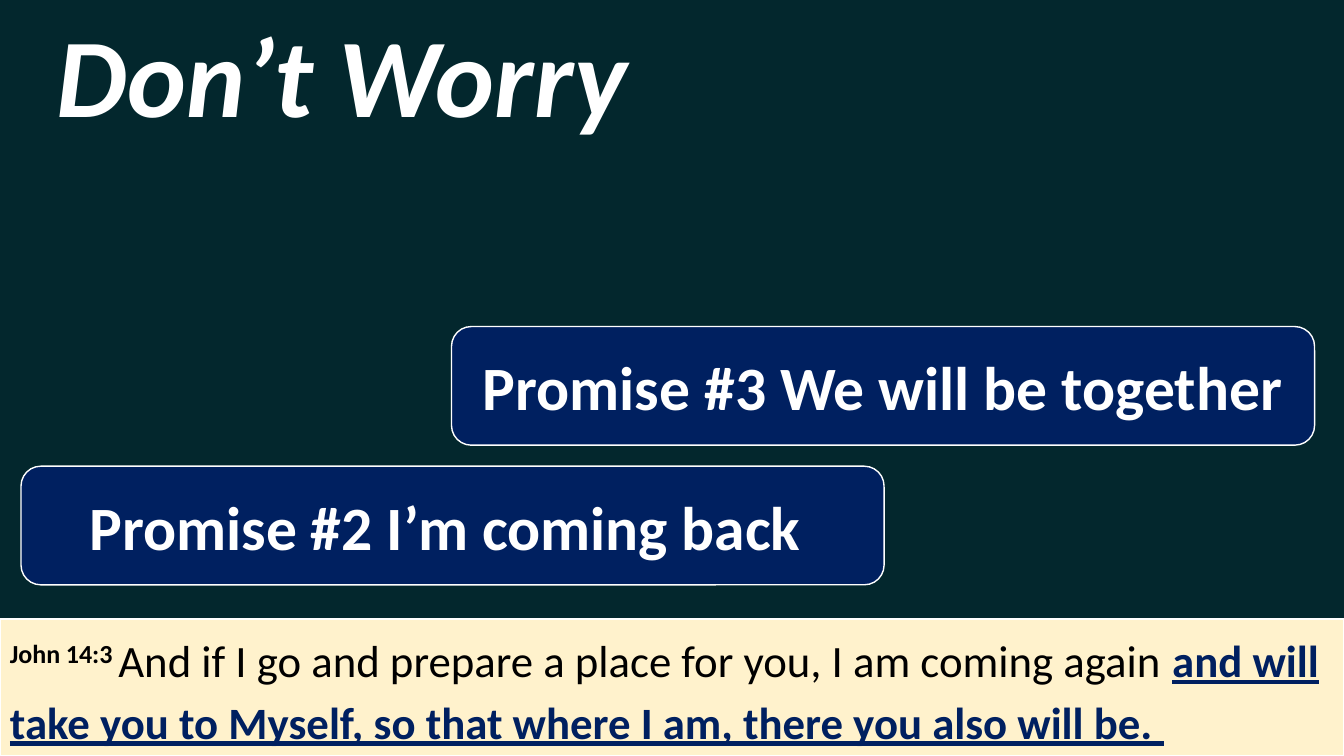
"""Build the "Don't Worry" slide with two promises and a verse."""
from pptx import Presentation
from pptx.dml.color import RGBColor
from pptx.enum.shapes import MSO_SHAPE as Kind
from pptx.enum.text import MSO_ANCHOR as Anchor, PP_ALIGN as Align
from pptx.util import Pt

PX = 9525
WHITE, NAVY, CREAM = "FFFFFF", "002060", "FFF2CC"


def tint(code):
    return RGBColor.from_string(code)


def style(run, size, color, bold=True):
    font = run.font
    font.name, font.size, font.bold = "Calibri", Pt(size), bold
    font.color.rgb = tint(color)
    return font


deck = Presentation()
deck.slide_width, deck.slide_height = 1280 * PX, 720 * PX
slide = deck.slides.add_slide(deck.slide_layouts[6])
back = slide.background.fill
back.solid()
back.fore_color.rgb = tint("03272D")

boxes = [
    (Kind.RECTANGLE, 0, 590, 1280, 130, CREAM, 1.5, "", 32),
    (Kind.ROUNDED_RECTANGLE, 18, 13, 640, 113, None, 0, "Don’t Worry ", 80),
    (Kind.ROUNDED_RECTANGLE, 20, 444, 822, 113, NAVY, 1, "Promise #2 I’m coming back ", 44),
    (Kind.ROUNDED_RECTANGLE, 430, 311, 822, 113, NAVY, 1, "Promise #3 We will be together", 44),
]
shapes = []
for kind, left, top, wide, high, color, line, text, size in boxes:
    shape = slide.shapes.add_shape(kind, left * PX, top * PX, wide * PX, high * PX)
    shape.shadow.inherit = False
    if color:
        shape.fill.solid()
        shape.fill.fore_color.rgb = tint(color)
        shape.line.color.rgb = tint(WHITE)
        shape.line.width = Pt(line)
    else:
        shape.fill.background()
        shape.line.fill.background()
    frame = shape.text_frame
    frame.word_wrap = True
    shapes.append(shape)
    if text:
        frame.vertical_anchor = Anchor.MIDDLE
        para = frame.paragraphs[0]
        para.text = text
        para.alignment = Align.CENTER
        style(para.runs[0], size, WHITE)

verse, title = shapes[:2]
title.text_frame.paragraphs[0].runs[0].font.italic = True

verse.text_frame.vertical_anchor = Anchor.TOP
para = verse.text_frame.paragraphs[0]
para.alignment = Align.LEFT
para.line_spacing = 1.15
para.space_after = Pt(8)
parts = [
    ("John 14:3 ", "000000", True),
    ("And if I go and prepare a place for you, I am coming again ", "000000", False),
    ("and will take you to Myself, so that where I am, there you also will be. ", NAVY, True),
]
for text, color, bold in parts:
    run = para.add_run()
    run.text = text
    style(run, 32, color, bold)
ref, _, vow = para.runs
ref._r.get_or_add_rPr().set("baseline", "30000")
vow.font.underline = True

deck.save("out.pptx")
